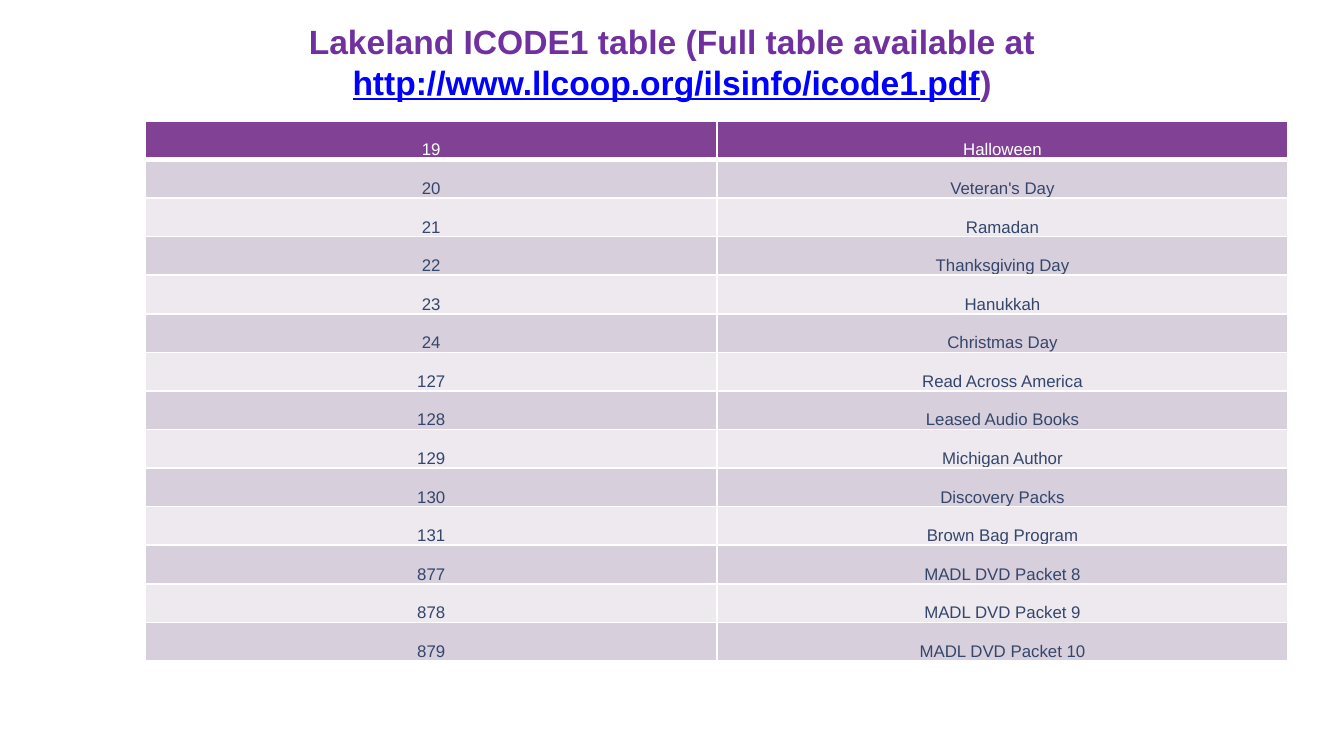
import dataclasses

import pptx
import pptx.dml.color
import pptx.enum.text
import pptx.oxml
import pptx.oxml.ns
import pptx.util

Pt = pptx.util.Pt
RGBColor = pptx.dml.color.RGBColor
CENTER = pptx.enum.text.PP_ALIGN.CENTER


@dataclasses.dataclass(frozen=True)
class Theme:
    font: str = "Arial"
    title_size: float = 18
    table_size: float = 9
    title: str = "7030A0"
    address: str = "0000FF"
    header_fill: str = "814296"
    header_text: str = "FFFFFF"
    body_text: str = "34466A"
    band_fills: tuple = ("D8CFDD", "EDE9EF")
    border: str = "FFFFFF"
    thin: float = 1
    thick: float = 3


class SlideBuilder:
    def __init__(self, slide, theme):
        self.slide = slide
        self.theme = theme

    def title(self, parts, left, top, width, height):
        """Add a centred heading from (text, colour, underlined) parts."""
        heading = self.slide.shapes.add_textbox(Pt(left), Pt(top), Pt(width), Pt(height))
        frame = heading.text_frame
        frame.word_wrap = True
        frame.vertical_anchor = pptx.enum.text.MSO_ANCHOR.MIDDLE
        line = frame.paragraphs[0]
        line.alignment = CENTER
        line.font.name = self.theme.font
        line.font.size = Pt(self.theme.title_size)
        line.font.bold = True
        for text, color, underlined in parts:
            part = line.add_run()
            part.text = text
            part.font.color.rgb = RGBColor.from_string(color)
            part.font.underline = underlined

    def table(self, rows, left, top, width, row_height):
        """Add a banded table whose first row is the header."""
        theme = self.theme
        codes = self.slide.shapes.add_table(
            len(rows), len(rows[0]), Pt(left), Pt(top), Pt(width), Pt(row_height * len(rows))
        ).table
        for row_index, values in enumerate(rows):
            codes.rows[row_index].height = Pt(row_height)
            if row_index == 0:
                fill, color = theme.header_fill, theme.header_text
            else:
                fill, color = theme.band_fills[(row_index - 1) % 2], theme.body_text
            above = theme.thick if row_index == 1 else theme.thin
            below = theme.thick if row_index == 0 else theme.thin
            for column_index, value in enumerate(values):
                cell = codes.cell(row_index, column_index)
                self.borders(cell, L=theme.thin, R=theme.thin, T=above, B=below)
                self.cell(cell, value, fill, color)

    def cell(self, cell, value, fill, color):
        cell.fill.solid()
        cell.fill.fore_color.rgb = RGBColor.from_string(fill)
        cell.vertical_anchor = pptx.enum.text.MSO_ANCHOR.BOTTOM
        cell.margin_left = cell.margin_right = cell.margin_top = Pt(0.7)
        cell.margin_bottom = 0
        cell.text = value
        line = cell.text_frame.paragraphs[0]
        line.alignment = CENTER
        line.font.name = self.theme.font
        line.font.size = Pt(self.theme.table_size)
        line.font.bold = False
        line.font.color.rgb = RGBColor.from_string(color)

    def borders(self, cell, **widths):
        """Draw cell edges; must run before the cell fill is set."""
        properties = cell._tc.get_or_add_tcPr()
        for side, width in widths.items():
            properties.append(pptx.oxml.parse_xml(
                f'<a:ln{side} {pptx.oxml.ns.nsdecls("a")} w="{Pt(width)}">'
                f'<a:solidFill><a:srgbClr val="{self.theme.border}"/></a:solidFill>'
                f'</a:ln{side}>'
            ))


ITEM_CODES = [
    ("19", "Halloween"),
    ("20", "Veteran's Day"),
    ("21", "Ramadan"),
    ("22", "Thanksgiving Day"),
    ("23", "Hanukkah"),
    ("24", "Christmas Day"),
    ("127", "Read Across America"),
    ("128", "Leased Audio Books"),
    ("129", "Michigan Author"),
    ("130", "Discovery Packs"),
    ("131", "Brown Bag Program"),
    ("877", "MADL DVD Packet 8"),
    ("878", "MADL DVD Packet 9"),
    ("879", "MADL DVD Packet 10"),
]


def main():
    presentation = pptx.Presentation()
    presentation.slide_width = Pt(720)
    presentation.slide_height = Pt(405)
    theme = Theme()
    builder = SlideBuilder(
        presentation.slides.add_slide(presentation.slide_layouts[6]), theme
    )
    builder.title(
        [
            ("Lakeland ICODE1 table (Full table available at ", theme.title, False),
            ("http://www.llcoop.org/ilsinfo/icode1.pdf", theme.address, True),
            (")", theme.title, False),
        ],
        left=12, top=11, width=696, height=44,
    )
    builder.table(ITEM_CODES, left=78, top=64.8, width=612, row_height=20.68)
    presentation.save("out.pptx")


if __name__ == "__main__":
    main()
